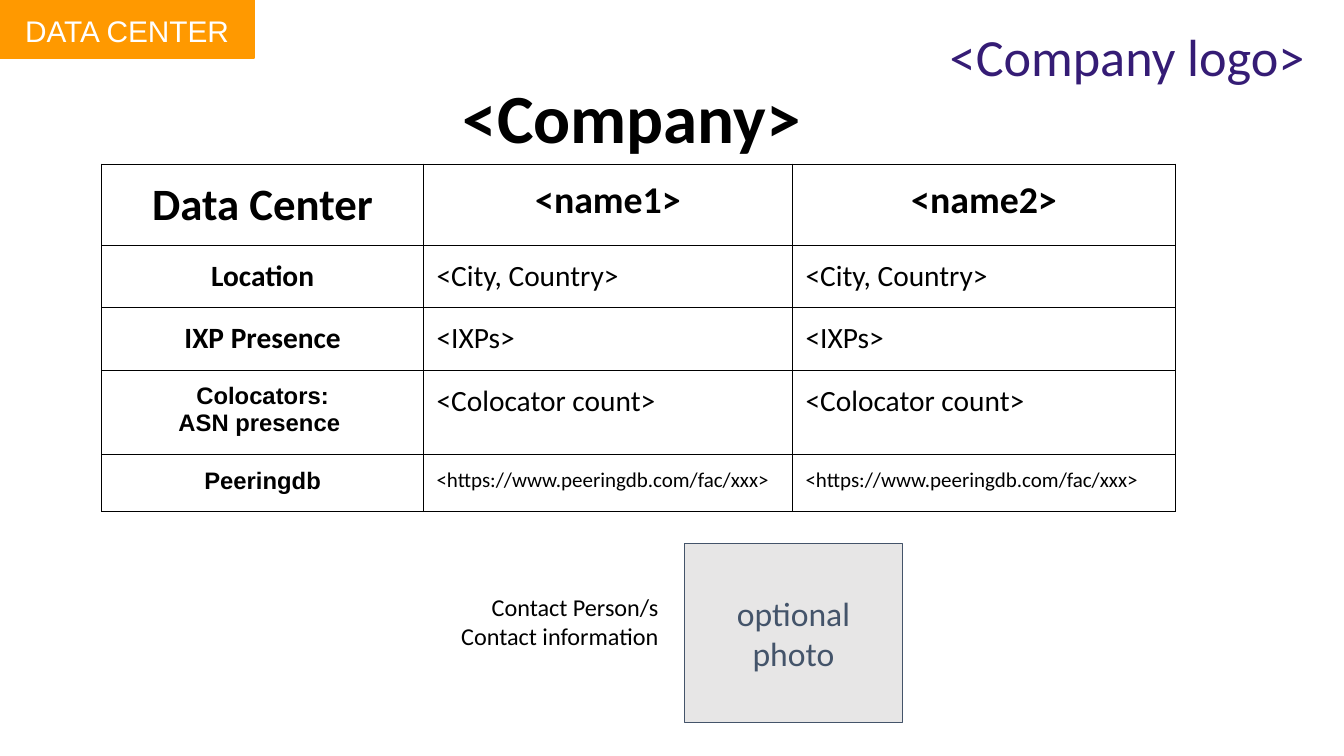
from pptx import Presentation
from pptx.dml.color import RGBColor
from pptx.enum.shapes import MSO_SHAPE
from pptx.enum.text import MSO_ANCHOR, PP_ALIGN
from pptx.oxml import parse_xml
from pptx.oxml.ns import nsdecls
from pptx.util import Pt

EMU_PER_PX = 9144  # 100 px to the inch
INSET = 13
BLACK = "000000"


def px(length):
    return length * EMU_PER_PX


def color(value):
    return RGBColor.from_string(value)


class SlideBuilder:
    def __init__(self, page):
        self.page = page

    def set_text(self, frame, lines, size, font="Calibri", ink=BLACK,
                 bold=False, align=PP_ALIGN.LEFT):
        frame.text = "\n".join(lines)
        for paragraph in frame.paragraphs:
            paragraph.alignment = align
            paragraph.font.name = font
            paragraph.font.size = Pt(size)
            paragraph.font.bold = bold
            paragraph.font.color.rgb = color(ink)

    def inset(self, holder):
        """Set equal margins on a text frame or a table cell."""
        holder.margin_left = holder.margin_right = px(INSET)
        holder.margin_top = holder.margin_bottom = px(INSET)

    def text(self, area, lines, size, **style):
        box = self.page.shapes.add_textbox(*map(px, area))
        box.text_frame.word_wrap = True
        self.inset(box.text_frame)
        self.set_text(box.text_frame, lines, size, **style)

    def rectangle(self, area, fill, line, line_width, anchor, lines, size, **style):
        box = self.page.shapes.add_shape(MSO_SHAPE.RECTANGLE, *map(px, area))
        box.shadow.inherit = False
        box.fill.solid()
        box.fill.fore_color.rgb = color(fill)
        box.line.color.rgb = color(line)
        box.line.width = Pt(line_width)
        frame = box.text_frame
        frame.word_wrap = True
        frame.vertical_anchor = anchor
        self.inset(frame)
        self.set_text(frame, lines, size, align=PP_ALIGN.CENTER, **style)

    def border(self, cell):
        properties = cell._tc.get_or_add_tcPr()
        for side in ("lnL", "lnR", "lnT", "lnB"):
            properties.append(parse_xml(
                f'<a:{side} {nsdecls("a")} w="{Pt(1)}"><a:solidFill>'
                f'<a:srgbClr val="{BLACK}"/></a:solidFill></a:{side}>'))

    def table(self, left, top, widths, heights, rows):
        """Draw rows of (lines, style) cells."""
        grid = self.page.shapes.add_table(
            len(heights), len(widths), px(left), px(top),
            px(sum(widths)), px(sum(heights))).table
        grid.first_row = grid.horz_banding = False
        for column, width in zip(grid.columns, widths):
            column.width = px(width)
        for row, height, entries in zip(grid.rows, heights, rows):
            row.height = px(height)
            for cell, (lines, style) in zip(row.cells, entries):
                self.border(cell)
                cell.fill.background()
                self.inset(cell)
                self.set_text(cell.text_frame, lines, **style)


def facility_rows():
    heading = {"bold": True, "align": PP_ALIGN.CENTER}
    label = {"size": 21, **heading}
    small_label = {"size": 17, "font": "Arial", **heading}
    facts = [
        (["Location"], label, "<City, Country>", 21),
        (["IXP Presence"], label, "<IXPs>", 21),
        (["Colocators:", "ASN presence "], small_label, "<Colocator count>", 21),
        (["Peeringdb"], small_label, "<https://www.peeringdb.com/fac/xxx>", 15),
    ]
    header = [(["Data Center"], {"size": 32, **heading})]
    header += [([name], {"size": 27, **heading}) for name in ("<name1>", "<name2>")]
    return [header] + [
        [(lines, style)] + [([value], {"size": size})] * 2
        for lines, style, value, size in facts]


def main():
    deck = Presentation()
    deck.slide_width, deck.slide_height = px(1333), px(750)
    slide = SlideBuilder(deck.slides.add_slide(deck.slide_layouts[6]))

    slide.table(101, 163, [319, 366, 380], [80, 62, 62, 84, 56], facility_rows())
    slide.text((929, 11, 380, 128), ["<Company logo>"], 37.3, ink="351C75")
    slide.text((405, 575, 261, 85), ["Contact Person/s", "Contact information"],
               17.3, align=PP_ALIGN.RIGHT)
    slide.text((446, 61, 516, 128), ["<Company>"], 49.3, bold=True)
    slide.rectangle((679, 539, 216, 178), "E7E6E6", "44546A", 0.75,
                    MSO_ANCHOR.MIDDLE, ["optional", "photo"], 24, ink="44546A")
    slide.rectangle((0, 0, 252, 58), "FF9900", "FF9900", 1.5,
                    MSO_ANCHOR.TOP, ["DATA CENTER"], 21.3, font="Arial", ink="FFFFFF")
    deck.save("out.pptx")


if __name__ == "__main__":
    main()
